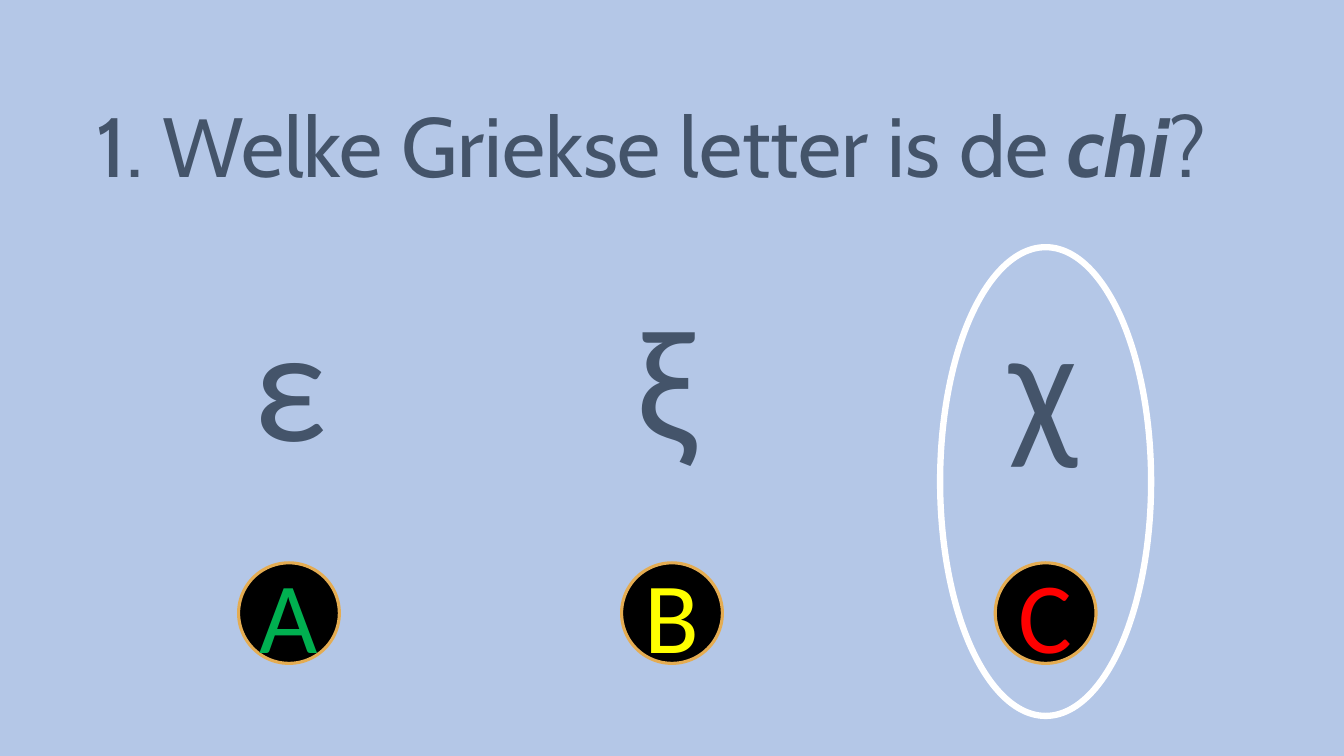
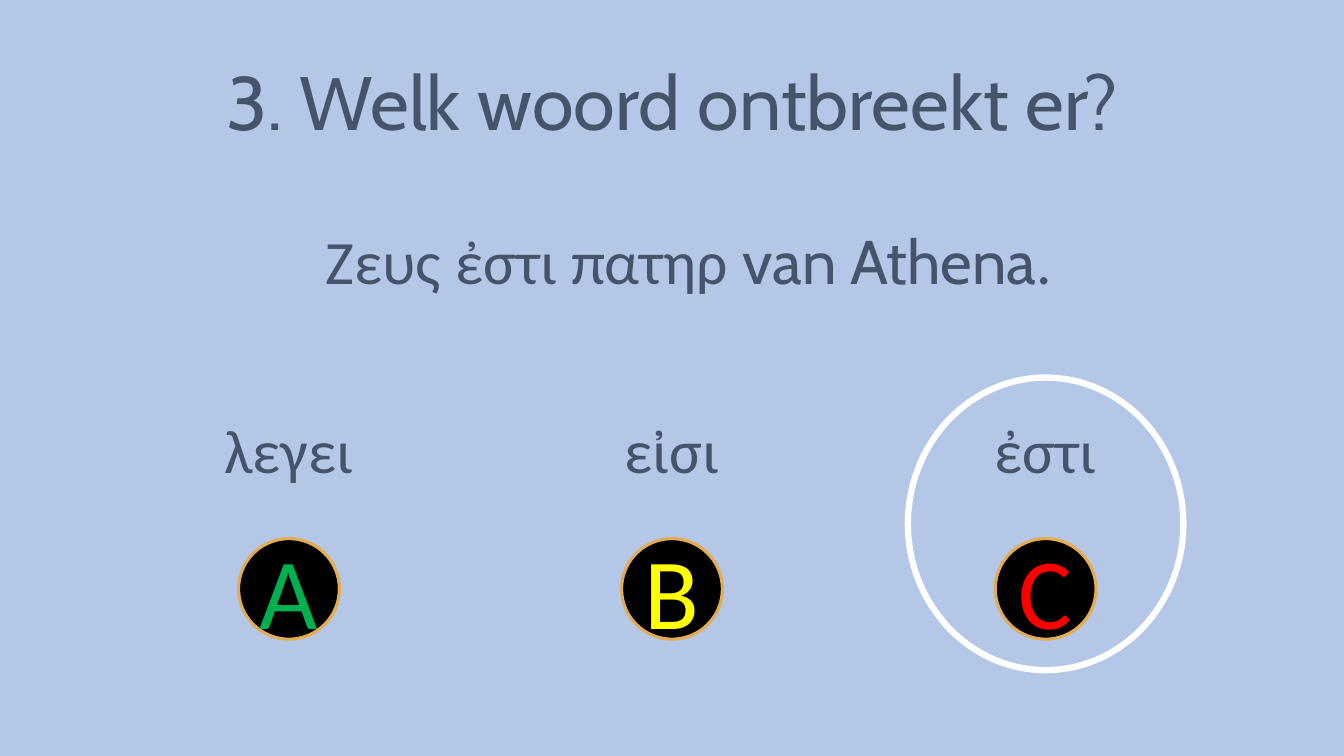
"""Build two quiz slides on Greek letters and words."""
from pptx import Presentation, util as u
from pptx.dml.color import RGBColor
from pptx.enum import shapes, text

SKY = RGBColor(0xB4, 0xC7, 0xE7)
SLATE = RGBColor(0x44, 0x54, 0x6A)
GOLD = RGBColor(0xE4, 0xAC, 0x52)
BLACK = RGBColor(0, 0, 0)
WHITE = RGBColor(255, 255, 255)
GREEN = RGBColor(0, 0xB0, 0x50)
YELLOW = RGBColor(255, 255, 0)
RED = RGBColor(255, 0, 0)

HEAD, BODY = "Cabin", "Calibri"
WIDE, HIGH = u.Inches(13.33), u.Inches(7.5)
COLS = (21.5, 50, 77.8)
KEYS = (("A", GREEN), ("B", YELLOW), ("C", RED))
LEFT, MID = text.PP_ALIGN.LEFT, text.PP_ALIGN.CENTER


def area(x, y, w, h):
    """Turn a centre and size in percent of the slide into a frame."""
    return (int(WIDE * (x - w / 2) / 100), int(HIGH * (y - h / 2) / 100),
            int(WIDE * w / 100), int(HIGH * h / 100))


def write(shape, parts, size, align=MID, color=SLATE):
    """Fill a shape with runs given as (words, font, strong)."""
    frame = shape.text_frame
    frame.word_wrap = True
    frame.auto_size = text.MSO_AUTO_SIZE.NONE
    frame.vertical_anchor = text.MSO_ANCHOR.TOP
    line = frame.paragraphs[0]
    line.alignment = align
    for words, name, strong in parts:
        run = line.add_run()
        run.text = words
        font = run.font
        font.name, font.size = name, u.Pt(size)
        font.bold = font.italic = strong
        font.color.rgb = color


def title(slide, parts, size, place):
    """Place and fill the title of a slide."""
    head = slide.shapes.title
    head.left, head.top, head.width, head.height = area(*place)
    write(head, parts, size)


def label(slide, parts, size, place, align=MID):
    """Add a text box."""
    write(slide.shapes.add_textbox(*area(*place)), parts, size, align)


def oval(slide, place, color, width):
    """Add an unfilled ellipse with a coloured outline."""
    shape = slide.shapes.add_shape(shapes.MSO_SHAPE.OVAL, *area(*place))
    shape.shadow.inherit = False
    shape.fill.background()
    shape.line.color.rgb = color
    shape.line.width = u.Pt(width)
    return shape


def disc(slide, x, y, key, color):
    """Add a black answer button with its letter."""
    shape = oval(slide, (x, y, 7.5, 13.3), GOLD, 2.25)
    shape.fill.solid()
    shape.fill.fore_color.rgb = BLACK
    write(shape, [(key, BODY, False)], 72, color=color)
    frame = shape.text_frame
    frame.word_wrap = False
    frame.vertical_anchor = text.MSO_ANCHOR.MIDDLE
    frame.margin_left = frame.margin_right = 0
    frame.margin_top = frame.margin_bottom = 0


def choices(slide, words, size, place, align, low):
    """Add three answers above their buttons."""
    y, w, h = place
    for x, word, (key, color) in zip(COLS, words, KEYS):
        label(slide, [(word, BODY, False)], size, (x, y, w, h), align)
        disc(slide, x, low, key, color)


def main():
    """Build and save the quiz."""
    deck = Presentation()
    deck.slide_width, deck.slide_height = WIDE, HIGH
    back = deck.slide_master.background.fill
    back.solid()
    back.fore_color.rgb = SKY
    layout = deck.slide_layouts.get_by_name("Title Only")

    slide = deck.slides.add_slide(layout)
    title(slide, [("1. Welke Griekse letter is de ", HEAD, False),
                  ("chi", HEAD, True), ("?", HEAD, False)],
          60, (48.5, 19.1, 86.5, 14.8))
    choices(slide, "εξχ", 115, (50, 6.8, 27.2), LEFT, 81.1)
    oval(slide, (COLS[2], 63.7, 15.7, 62), WHITE, 4.5)

    slide = deck.slides.add_slide(layout)
    title(slide, [("3. Welk woord ontbreekt er?", HEAD, False)],
          54, (50, 13.3, 81.2, 13.5))
    label(slide, [("Ζευς ἐστι πατηρ ", BODY, False),
                  ("van Athena", HEAD, False), (".", BODY, False)],
          44, (51.3, 34.5, 55.6, 11.2), LEFT)
    choices(slide, ("λεγει", "εἰσι", "ἐστι"), 44, (59.5, 13, 11.2), MID, 77.9)
    oval(slide, (COLS[2], 69.3, 20.5, 38.7), WHITE, 4.5)

    deck.save("out.pptx")


if __name__ == "__main__":
    main()
